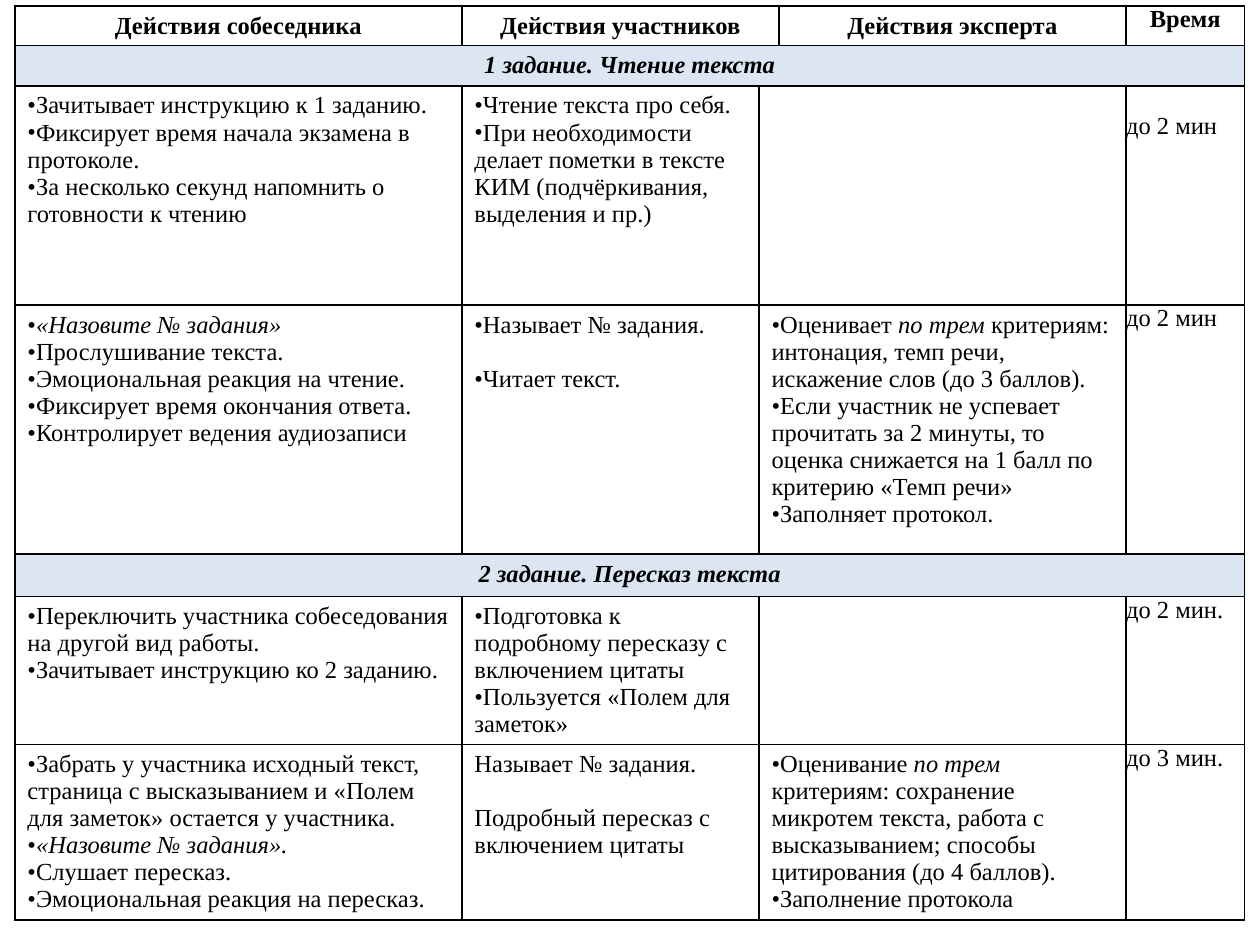
from lxml import etree
from pptx import Presentation
from pptx.dml.color import RGBColor
from pptx.enum import text as t
from pptx.oxml import ns
from pptx.util import Cm, Pt

BLACK = RGBColor(0, 0, 0)
BLUE = RGBColor(0xDC, 0xE6, 0xF2)
FONT = "Times New Roman"
BULLET = "•"
GAP = Pt(15.5)

COLS = [9.01, 5.99, 0.4, 7, 2.39]
ROWS = [0.79, 0.81, 4.42, 5.02, 0.85, 2.96, 3.54]
HEAD = dict(bold=True, align=t.PP_ALIGN.CENTER)
BAND = dict(HEAD, italic=True, fill=BLUE)
TIME = dict(inset=0)

CELLS = [
    [(0, 0, ["Действия собеседника"], HEAD),
     (1, 2, ["Действия участников"], HEAD),
     (3, 3, ["Действия эксперта"], HEAD),
     (4, 4, ["Время"], dict(HEAD, inset=0))],
    [(0, 4, ["1 задание. Чтение текста"], BAND)],
    [(0, 0, ["•Зачитывает инструкцию к 1 заданию.",
             "•Фиксирует время начала экзамена в протоколе.",
             "•За несколько секунд напомнить о готовности к чтению"], {}),
     (1, 1, ["•Чтение текста про себя.",
             "•При необходимости делает пометки в тексте КИМ "
             "(подчёркивания, выделения и пр.)"], {}),
     (2, 3, [], {}),
     (4, 4, ["до 2 мин"], dict(TIME, top=0.55))],
    [(0, 0, ["•*«Назовите № задания»*",
             "•Прослушивание текста.",
             "•Эмоциональная реакция на чтение.",
             "•Фиксирует время окончания ответа.",
             "•Контролирует ведения аудиозаписи"], {}),
     (1, 1, ["•Называет № задания.", "•Читает текст."], dict(gap=GAP)),
     (2, 3, ["•Оценивает *по трем *критериям: интонация, темп речи, "
             "искажение слов (до 3 баллов).",
             "•Если участник не успевает прочитать за 2 минуты, то оценка "
             "снижается на 1 балл по критерию «Темп речи»",
             "•Заполняет протокол."], {}),
     (4, 4, ["до 2 мин"], TIME)],
    [(0, 4, ["2 задание. Пересказ текста"], BAND)],
    [(0, 0, ["•Переключить участника собеседования на другой вид работы.",
             "•Зачитывает инструкцию ко 2 заданию."], {}),
     (1, 1, ["•Подготовка к подробному пересказу с включением цитаты",
             "•Пользуется «Полем для заметок»"], {}),
     (2, 3, [], {}),
     (4, 4, ["до 2 мин."], TIME)],
    [(0, 0, ["•Забрать у участника исходный текст, страница с высказыванием "
             "и «Полем для заметок» остается у участника.",
             "•*«Назовите № задания».*",
             "•Слушает пересказ.",
             "•Эмоциональная реакция на пересказ."], {}),
     (1, 1, ["Называет № задания.",
             "Подробный пересказ с включением цитаты"], dict(gap=GAP)),
     (2, 3, ["•Оценивание *по трем *критериям: сохранение микротем текста, "
             "работа с высказыванием; способы цитирования (до 4 баллов).",
             "•Заполнение протокола"], {}),
     (4, 4, ["до 3 мин."], TIME)],
]


def write(cell, lines, bold=False, italic=False, align=t.PP_ALIGN.LEFT,
          fill=None, inset=None, top=None, gap=0):
    if fill is not None:
        cell.fill.solid()
        cell.fill.fore_color.rgb = fill
    if inset is not None:
        cell.margin_left = cell.margin_right = Cm(inset)
        cell.margin_top = cell.margin_bottom = Cm(inset)
    if top is not None:
        cell.margin_top = Cm(top)
    frame = cell.text_frame
    for n, line in enumerate(lines):
        para = frame.paragraphs[0] if n == 0 else frame.add_paragraph()
        para.alignment = align
        if n and gap:
            para.space_before = gap
        if line.startswith(BULLET):
            props = para._p.get_or_add_pPr()
            etree.SubElement(props, ns.qn("a:buFont"), typeface=FONT)
            etree.SubElement(props, ns.qn("a:buChar"), char=BULLET)
        for k, part in enumerate(line.removeprefix(BULLET).split("*")):
            if part:
                run = para.add_run()
                run.text = part
                font = run.font
                font.name, font.size = FONT, Pt(14)
                font.bold, font.italic = bold, italic or k % 2 == 1
                font.color.rgb = BLACK


def outline(cell):
    props = cell._tc.get_or_add_tcPr()
    for n, side in enumerate(("lnL", "lnR", "lnT", "lnB")):
        line = etree.Element(ns.qn("a:" + side), w=str(Pt(1)))
        solid = etree.SubElement(line, ns.qn("a:solidFill"))
        etree.SubElement(solid, ns.qn("a:srgbClr"), val=str(BLACK))
        props.insert(n, line)


def main():
    deck = Presentation()
    deck.slide_width, deck.slide_height = Cm(25.4), Cm(19.05)
    slide = deck.slides.add_slide(deck.slide_layouts[6])
    table = slide.shapes.add_table(
        len(ROWS), len(COLS), Cm(0.3), Cm(0.12),
        Cm(sum(COLS)), Cm(sum(ROWS))).table
    table.first_row = table.horz_banding = False
    for col, width in zip(table.columns, COLS):
        col.width = Cm(width)
    for row, height in zip(table.rows, ROWS):
        row.height = Cm(height)
    for cell in table.iter_cells():
        cell.fill.background()
        outline(cell)
    for r, row in enumerate(CELLS):
        for first, last, lines, look in row:
            cell = table.cell(r, first)
            if last > first:
                cell.merge(table.cell(r, last))
            write(cell, lines, **look)
    deck.save("out.pptx")


if __name__ == "__main__":
    main()
